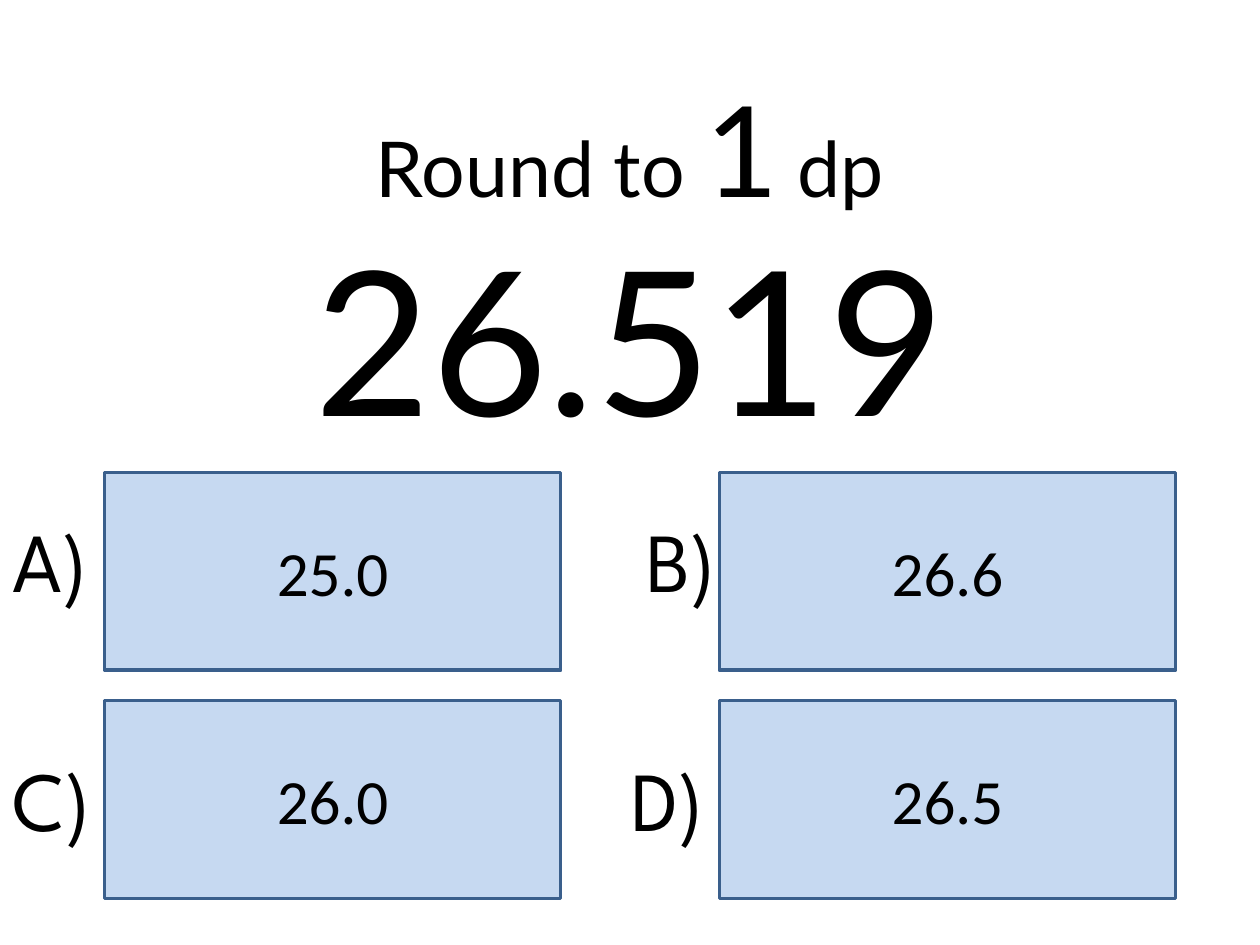
from pptx import Presentation
from pptx.dml.color import RGBColor
from pptx.enum.shapes import MSO_SHAPE
from pptx.enum.text import MSO_ANCHOR, MSO_AUTO_SIZE, PP_ALIGN
from pptx.util import Inches, Pt

RECTANGLE = MSO_SHAPE.RECTANGLE
MIDDLE, TOP = MSO_ANCHOR.MIDDLE, MSO_ANCHOR.TOP
CENTER, LEFT = PP_ALIGN.CENTER, PP_ALIGN.LEFT
NO_FIT, GROW = MSO_AUTO_SIZE.NONE, MSO_AUTO_SIZE.SHAPE_TO_FIT_TEXT

BLACK = RGBColor(0x00, 0x00, 0x00)
PALE_BLUE = RGBColor(0xC6, 0xD9, 0xF1)
DARK_BLUE = RGBColor(0x3A, 0x5F, 0x8C)

COLUMNS = (0.83, 5.71)
ANSWER_ROWS = (3.75, 5.56)
LABEL_ROWS = (3.99, 5.88)
ANSWERS = (("25.0", "26.6"), ("26.0", "26.5"))
LABELS = (
    (("A)", 0, 0.95), ("B)", 5.03, 0.84)),
    (("C)", 0, 1), ("D)", 4.91, 0.95)),
)


def write(frame, spans, font, align=CENTER, anchor=MIDDLE, wrap=True, fit=NO_FIT):
    frame.word_wrap = wrap
    frame.auto_size = fit
    frame.vertical_anchor = anchor
    para = frame.paragraphs[0]
    para.alignment = align
    for text, size in spans:
        span = para.add_run()
        span.text = text
        span.font.name = font
        span.font.size = Pt(size)
        span.font.color.rgb = BLACK


class QuizPage:
    heading_font = "Lato"
    answer_font = "Calibri"
    label_font = "League Spartan"

    def __init__(self, deck):
        self.page = deck.slides.add_slide(deck.slide_layouts[5])

    def title(self, spans, left, top, width, height):
        box = self.page.shapes.title
        box.left, box.top = Inches(left), Inches(top)
        box.width, box.height = Inches(width), Inches(height)
        write(box.text_frame, spans, self.heading_font)

    def number(self, text, left, top, width, height):
        box = self.page.shapes.add_textbox(
            Inches(left), Inches(top), Inches(width), Inches(height))
        write(box.text_frame, [(text, 115)], self.heading_font)

    def answer(self, text, left, top):
        box = self.page.shapes.add_shape(
            RECTANGLE, Inches(left), Inches(top), Inches(3.62), Inches(1.57))
        box.shadow.inherit = False
        box.fill.solid()
        box.fill.fore_color.rgb = PALE_BLUE
        box.line.color.rgb = DARK_BLUE
        box.line.width = Pt(2)
        write(box.text_frame, [(text, 36)], self.answer_font)

    def label(self, text, left, top, width):
        box = self.page.shapes.add_textbox(
            Inches(left), Inches(top), Inches(width), Inches(0.91))
        write(box.text_frame, [(text, 48)], self.label_font,
              align=LEFT, anchor=TOP, wrap=False, fit=GROW)


def main():
    deck = Presentation()
    deck.slide_width, deck.slide_height = Inches(10), Inches(7.5)
    quiz = QuizPage(deck)

    for top, row in zip(ANSWER_ROWS, ANSWERS):
        for left, text in zip(COLUMNS, row):
            quiz.answer(text, left, top)
    for top, row in zip(LABEL_ROWS, LABELS):
        for text, left, width in row:
            quiz.label(text, left, top, width)

    quiz.title([("Round to ", 44), ("1", 72), (" dp", 44)], 0.75, 0.36, 8.5, 1.61)
    quiz.number("26.519", 0.75, 1.86, 8.5, 1.61)
    deck.save("out.pptx")


if __name__ == "__main__":
    main()
